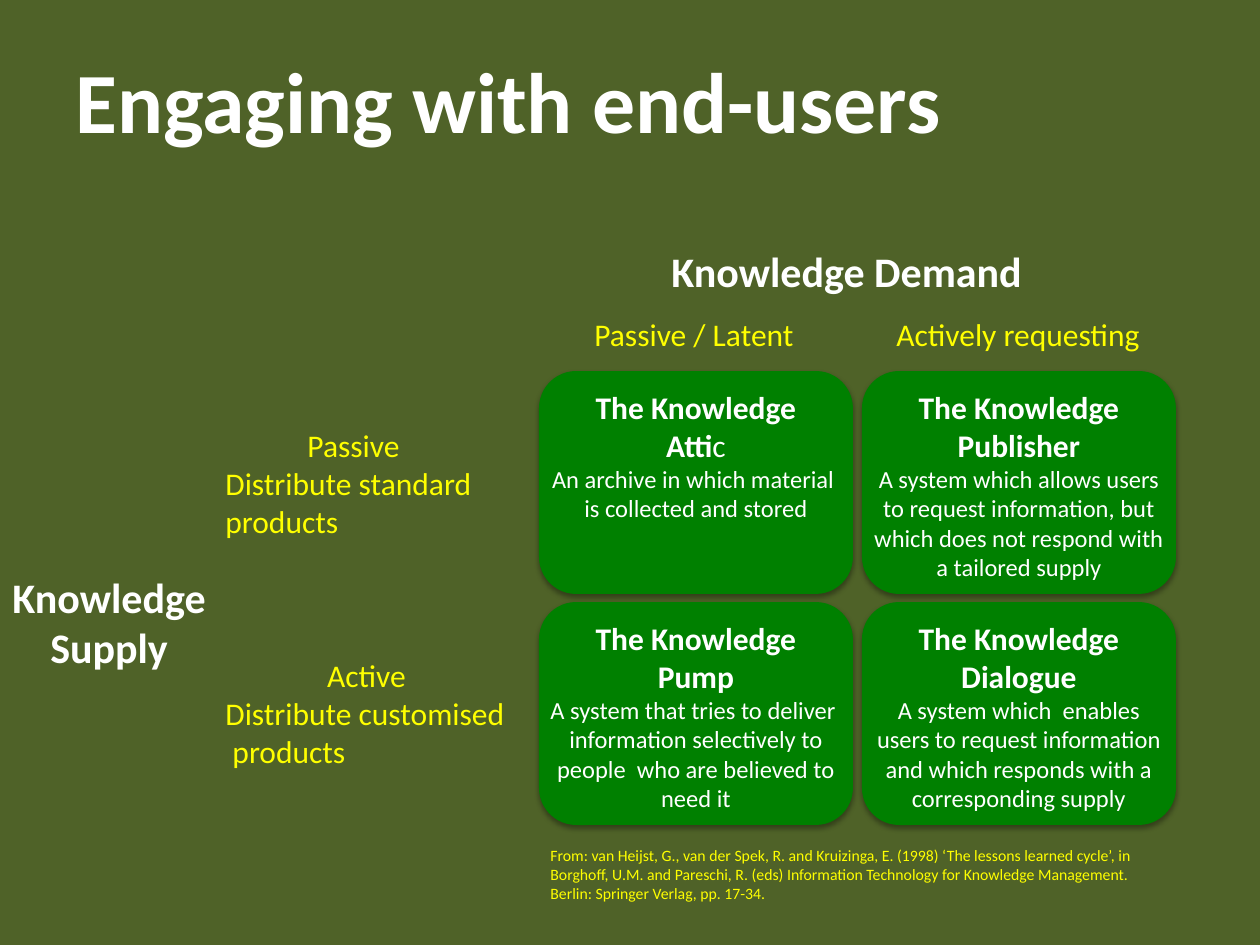
from lxml import etree
from pptx import Presentation
from pptx import util as u
from pptx.dml.color import RGBColor
from pptx.enum import shapes, text

PX = 914400 / 126
WHITE, YELLOW, GREEN, OLIVE = "FFFFFF", "FFFF00", "008000", "4F6228"
SHADOW = (
    '<a:effectLst xmlns:a="http://schemas.openxmlformats.org/drawingml/2006/main">'
    '<a:outerShdw blurRad="39400" dist="22900" dir="5400000" rotWithShape="0">'
    '<a:srgbClr val="000000"><a:alpha val="35000"/></a:srgbClr>'
    '</a:outerShdw></a:effectLst>'
)


def paint(color, value):
    color.rgb = RGBColor.from_string(value)


def write(tf, lines, color):
    """Each line is (text, size, bold, centred)."""
    for i, (words, size, bold, centred) in enumerate(lines):
        p = tf.paragraphs[0] if i == 0 else tf.add_paragraph()
        p.text = words
        p.alignment = text.PP_ALIGN.CENTER if centred else text.PP_ALIGN.LEFT
        for r in p.runs:
            r.font.name, r.font.size, r.font.bold = "Calibri", u.Pt(size), bold
            paint(r.font.color, color)


prs = Presentation()
prs.slide_width, prs.slide_height = u.Inches(10), u.Inches(7.5)
s = prs.slides.add_slide(prs.slide_layouts[6])
s.background.fill.solid()
paint(s.background.fill.fore_color, OLIVE)

# Title, axis headings, category labels and source
labels = [
    ((63, 20, 1134, 158), WHITE, True, [("Engaging with end-users", 49, True, False)]),
    ((659, 239, 379, 63), WHITE, False, [("Knowledge Demand", 24, True, False)]),
    ((0, 565, 230, 115), WHITE, False,
     [("Knowledge", 24, True, False), ("Supply", 24, True, True)]),
    ((582, 309, 227, 50), YELLOW, False, [("Passive / Latent", 18, False, False)]),
    ((884, 309, 272, 50), YELLOW, False, [("Actively requesting", 18, False, False)]),
    ((213, 420, 281, 127), YELLOW, False,
     [("Passive", 18, False, True), ("Distribute standard", 18, False, False),
      ("products", 18, False, False)]),
    ((213, 650, 307, 127), YELLOW, False,
     [("Active", 18, False, True), ("Distribute customised", 18, False, False),
      (" products", 18, False, False)]),
    ((538, 840, 609, 71), YELLOW, True,
     [("From: van Heijst, G., van der Spek, R. and Kruizinga, E. (1998) ‘The lessons "
       "learned cycle’, in Borghoff, U.M. and Pareschi, R. (eds) Information Technology "
       "for Knowledge Management. Berlin: Springer Verlag, pp. 17-34.", 9, False, False)]),
]
for box, color, wrap, lines in labels:
    tf = s.shapes.add_textbox(*(int(v * PX) for v in box)).text_frame
    tf.word_wrap = wrap
    write(tf, lines, color)
    if lines[0][1] == 49:
        tf.vertical_anchor = text.MSO_ANCHOR.MIDDLE
    else:
        tf.auto_size = text.MSO_AUTO_SIZE.SHAPE_TO_FIT_TEXT

# Two-by-two matrix: supply in rows, demand in columns
matrix = [
    [("Attic", ["An archive in which material ", "is collected and stored"]),
     ("Publisher", ["A system which allows users to request information, but which "
                    "does not respond with a tailored supply"])],
    [("Pump", ["A system that tries to deliver ",
               "information selectively to people  who are believed to need it"]),
     ("Dialogue", ["A system which  enables users to request information and which "
                   "responds with a corresponding supply"])],
]
for row, cells in enumerate(matrix):
    for col, (name, details) in enumerate(cells):
        box = (539 + 323 * col, 371 + 231 * row, 314, 223)
        sp = s.shapes.add_shape(shapes.MSO_SHAPE.ROUNDED_RECTANGLE,
                                *(int(v * PX) for v in box))
        sp.fill.solid()
        paint(sp.fill.fore_color, GREEN)
        sp.line.fill.background()
        sp._element.spPr.append(etree.fromstring(SHADOW))
        tf = sp.text_frame
        tf.word_wrap = True
        tf.margin_left = tf.margin_right = 0
        tf.vertical_anchor = text.MSO_ANCHOR.TOP
        write(tf, [("The Knowledge", 18, True, True), (name, 18, True, True)]
              + [(d, 14, False, True) for d in details], WHITE)
        # The last letter of "Attic" is set in regular weight
        if name == "Attic":
            p = tf.paragraphs[1]
            p.runs[0].text = "Atti"
            r = p.add_run()
            r.text = "c"
            r.font.name, r.font.size, r.font.bold = "Calibri", u.Pt(18), False
            paint(r.font.color, WHITE)

prs.save("out.pptx")
